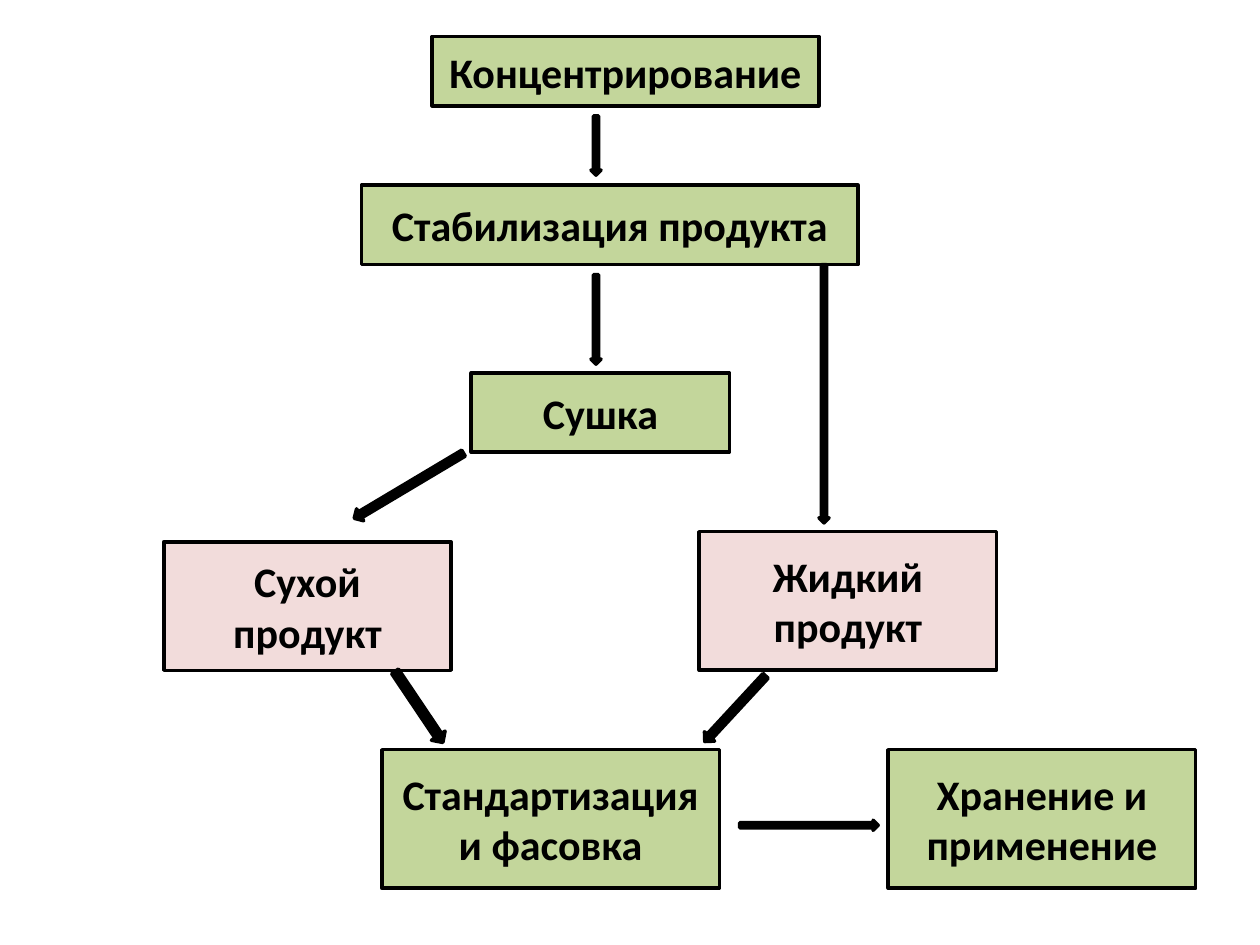
from typing import NamedTuple

from pptx import Presentation
from pptx.dml.color import RGBColor
from pptx.enum.shapes import MSO_SHAPE as Form
from pptx.enum.text import MSO_ANCHOR as Anchor, PP_ALIGN as Align
from pptx.util import Inches, Pt

GREEN = RGBColor(0xC3, 0xD6, 0x9B)
PINK = RGBColor(0xF2, 0xDC, 0xDB)
BLACK = RGBColor(0, 0, 0)

WIDE, HIGH = Inches(10), Inches(7.5)
COLS, ROWS = 100, 75
FONT = "Calibri"


class Area(NamedTuple):
    col: float
    row: float
    cols: float
    rows: float


class Step(NamedTuple):
    text: str
    area: Area
    fill: RGBColor = GREEN


class Arrow(NamedTuple):
    area: Area
    form: Form = Form.DOWN_ARROW
    turn: float = 0


STEPS = [
    Step("Концентрирование", Area(34.3, 2.9, 30.7, 5.5)),
    Step("Стабилизация продукта", Area(28.7, 14.7, 39.4, 6.3)),
    Step("Сушка", Area(37.4, 29.6, 20.5, 6.3)),
    Step("Сухой\nпродукт", Area(13, 43, 22.8, 10.2), PINK),
    Step("Жидкий\nпродукт", Area(55.5, 42.2, 23.6, 11), PINK),
    Step("Стандартизация и фасовка", Area(30.3, 59.5, 26.8, 11)),
    Step("Хранение и применение", Area(70.5, 59.5, 24.4, 11)),
]

ARROWS = [
    Arrow(Area(46.9, 9.2, 0.8, 4.7)),
    Arrow(Area(46.9, 21.8, 0.8, 7.1)),
    Arrow(Area(65, 21, 0.8, 20.5)),
    Arrow(Area(27.4, 38, 10.1, 1.1), Form.LEFT_ARROW, -30.8),
    Arrow(Area(32.6, 52.7, 1.3, 6.8), turn=-33.9),
    Arrow(Area(57.8, 52.7, 1.1, 7.1), turn=42.8),
    Arrow(Area(58.7, 65.1, 11, 0.8), Form.RIGHT_ARROW),
]


def add_form(slide, form: Form, area: Area, fill: RGBColor):
    shape = slide.shapes.add_shape(
        form,
        round(WIDE * area.col / COLS),
        round(HIGH * area.row / ROWS),
        round(WIDE * area.cols / COLS),
        round(HIGH * area.rows / ROWS),
    )
    shape.shadow.inherit = False
    shape.fill.solid()
    shape.fill.fore_color.rgb = fill
    shape.line.color.rgb = BLACK
    shape.line.width = Pt(2)
    return shape


def add_step(slide, step: Step) -> None:
    frame = add_form(slide, Form.RECTANGLE, step.area, step.fill).text_frame
    frame.word_wrap = True
    frame.vertical_anchor = Anchor.MIDDLE
    para = frame.paragraphs[0]
    para.alignment = Align.CENTER
    for index, line in enumerate(step.text.split("\n")):
        if index:
            para.add_line_break()
        run = para.add_run()
        run.text = line
        run.font.name = FONT
        run.font.size = Pt(24)
        run.font.bold = True
        run.font.color.rgb = BLACK


def add_arrow(slide, arrow: Arrow) -> None:
    add_form(slide, arrow.form, arrow.area, BLACK).rotation = arrow.turn


def main() -> None:
    deck = Presentation()
    deck.slide_width, deck.slide_height = WIDE, HIGH
    slide = deck.slides.add_slide(deck.slide_layouts[6])
    for step in STEPS:
        add_step(slide, step)
    for arrow in ARROWS:
        add_arrow(slide, arrow)
    deck.save("out.pptx")


if __name__ == "__main__":
    main()
